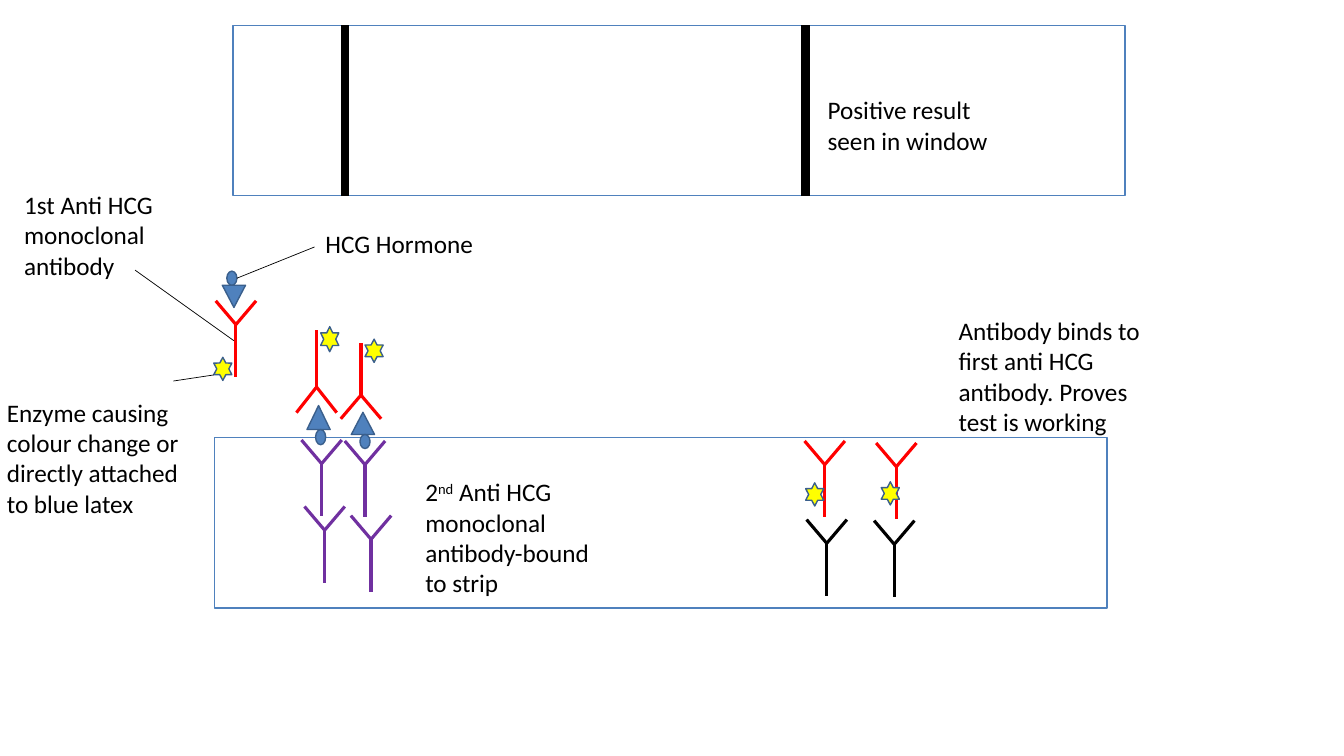
from lxml.etree import SubElement
from pptx import Presentation
from pptx.dml.color import RGBColor
from pptx.enum.shapes import MSO_CONNECTOR, MSO_SHAPE
from pptx.enum.text import MSO_AUTO_SIZE, PP_ALIGN
from pptx.oxml.ns import qn
from pptx.util import Inches, Pt

BLACK, WHITE, RED, PURPLE = "000000", "FFFFFF", "FF0000", "7030A0"
BLUE, DARK_BLUE, YELLOW = "4F81BD", "3A5F8C", "FFFF00"
STRIP_SIZE = (8.85, 1.69)
STAR_SIZE = (0.18, 0.23)


def colour(hex_code):
    return RGBColor.from_string(hex_code)


def add_line(shapes, start, end, hex_code, width):
    line = shapes.add_connector(
        MSO_CONNECTOR.STRAIGHT, *(Inches(value) for value in (*start, *end)))
    line.line.color.rgb = colour(hex_code)
    line.line.width = Pt(width)
    SubElement(line._element.spPr, qn("a:effectLst"))


def add_figure(shapes, kind, left, top, size, fill, outline, rotation=0):
    figure = shapes.add_shape(
        kind, *(Inches(value) for value in (left, top, *size)))
    figure.shadow.inherit = False
    figure.fill.solid()
    figure.fill.fore_color.rgb = colour(fill)
    figure.line.color.rgb = colour(outline)
    figure.line.width = Pt(1)
    figure.rotation = rotation


def add_strip(shapes, left, top):
    add_figure(shapes, MSO_SHAPE.RECTANGLE, left, top, STRIP_SIZE, WHITE, BLUE)


def add_centred(shapes, kind, x, y, size, fill, rotation):
    add_figure(shapes, kind, x - size[0] / 2, y - size[1] / 2, size,
               fill, DARK_BLUE, rotation)


def add_antibody(shapes, x, y, hex_code, up=1, stretch=1):
    """Draw a Y whose arms meet its stem at x, y; up is -1 for an inverted Y."""
    for side in (-0.2, 0.2):
        add_line(shapes, (x + side, y - 0.235 * up * stretch), (x, y), hex_code, 2.25)
    add_line(shapes, (x, y), (x, y + 0.52 * up * stretch), hex_code, 2.25)


def add_complex(page, x, y, up=1, stretch=1):
    """Group a red antibody with its enzyme star and the hormone it holds."""
    shapes = page.shapes.add_group_shape().shapes
    turn = 0 if up == 1 else 180
    tall = up * stretch
    add_centred(shapes, MSO_SHAPE.STAR_6_POINT, x - 0.13 * up, y + 0.44 * tall,
                (0.18, 0.23 * stretch), YELLOW, turn)
    add_antibody(shapes, x, y, RED, up, stretch)
    add_centred(shapes, MSO_SHAPE.ISOSCELES_TRIANGLE, x - 0.02 * up, y - 0.28 * tall,
                (0.23, 0.22 * stretch), BLUE, 180 - turn)
    add_centred(shapes, MSO_SHAPE.OVAL, x - 0.04 * up, y - 0.46 * tall,
                (0.1, 0.14 * stretch), BLUE, turn)


def add_label(page, left, top, width, height, *parts):
    """Write the parts as runs; a part that is a tuple is raised."""
    box = page.shapes.add_textbox(
        *(Inches(value) for value in (left, top, width, height)))
    frame = box.text_frame
    frame.word_wrap = True
    frame.auto_size = MSO_AUTO_SIZE.SHAPE_TO_FIT_TEXT
    para = frame.paragraphs[0]
    para.alignment = PP_ALIGN.LEFT
    for part in parts:
        raised = isinstance(part, tuple)
        span = para.add_run()
        span.text = part[0] if raised else part
        span.font.name = "Calibri"
        span.font.size = Pt(18)
        span.font.color.rgb = colour(BLACK)
        if raised:
            span._r.get_or_add_rPr().set("baseline", "30000")


def add_test_strip(page):
    add_strip(page.shapes, 2.13, 4.34)
    bound = [(3.68, 5.35), (3.62, 4.61), (3.22, 5.26), (3.19, 4.6)]
    for x, y in bound:
        add_antibody(page.shapes.add_group_shape().shapes, x, y, PURPLE)
    add_complex(page, 2.34, 3.22)
    add_complex(page, 3.58, 3.92, up=-1)
    add_complex(page, 3.14, 3.84, up=-1, stretch=1.08)
    control = [(8.87, 5.4, BLACK), (8.2, 5.39, BLACK),
               (8.18, 4.61, RED), (8.89, 4.63, RED)]
    for x, y, hex_code in control:
        add_antibody(page.shapes.add_group_shape().shapes, x, y, hex_code)
    for left, top in ((7.99, 4.79), (8.74, 4.78)):
        add_figure(page.shapes, MSO_SHAPE.STAR_6_POINT, left, top, STAR_SIZE,
                   YELLOW, DARK_BLUE, 180)


def add_result_window(page):
    left, top = 2.31, 0.25
    add_strip(page.shapes, left, top)
    for x in (3.42, 7.99):
        add_line(page.shapes, (x, top), (x, top + STRIP_SIZE[1]), BLACK, 6)


def add_labels(page):
    leaders = [((2.12, 3.72), (1.72, 3.78)), ((2.35, 2.76), (3.12, 2.45)),
               ((2.32, 3.38), (1.34, 2.68))]
    for start, end in leaders:
        add_line(page.shapes, start, end, BLACK, 0.5)
    add_label(page, 4.12, 4.68, 2.03, 1.31,
              "2", ("nd",), " Anti HCG monoclonal antibody-bound to strip")
    add_label(page, -0.03, 3.89, 2.03, 1.31,
              "Enzyme causing colour change or directly attached to blue latex")
    add_label(page, 3.13, 2.22, 2.03, 0.4, "HCG Hormone")
    add_label(page, 9.41, 3.08, 2.03, 1.31,
              "Antibody binds to first anti HCG antibody. Proves test is working")
    add_label(page, 0.14, 1.83, 1.79, 1.01, "1st Anti HCG monoclonal antibody")
    add_label(page, 8.11, 0.89, 1.81, 0.71, "Positive result seen in window")


def main():
    deck = Presentation()
    deck.slide_width, deck.slide_height = Inches(13.33), Inches(7.5)
    page = deck.slides.add_slide(deck.slide_layouts[6])
    add_test_strip(page)
    add_result_window(page)
    add_labels(page)
    deck.save("out.pptx")


if __name__ == "__main__":
    main()
